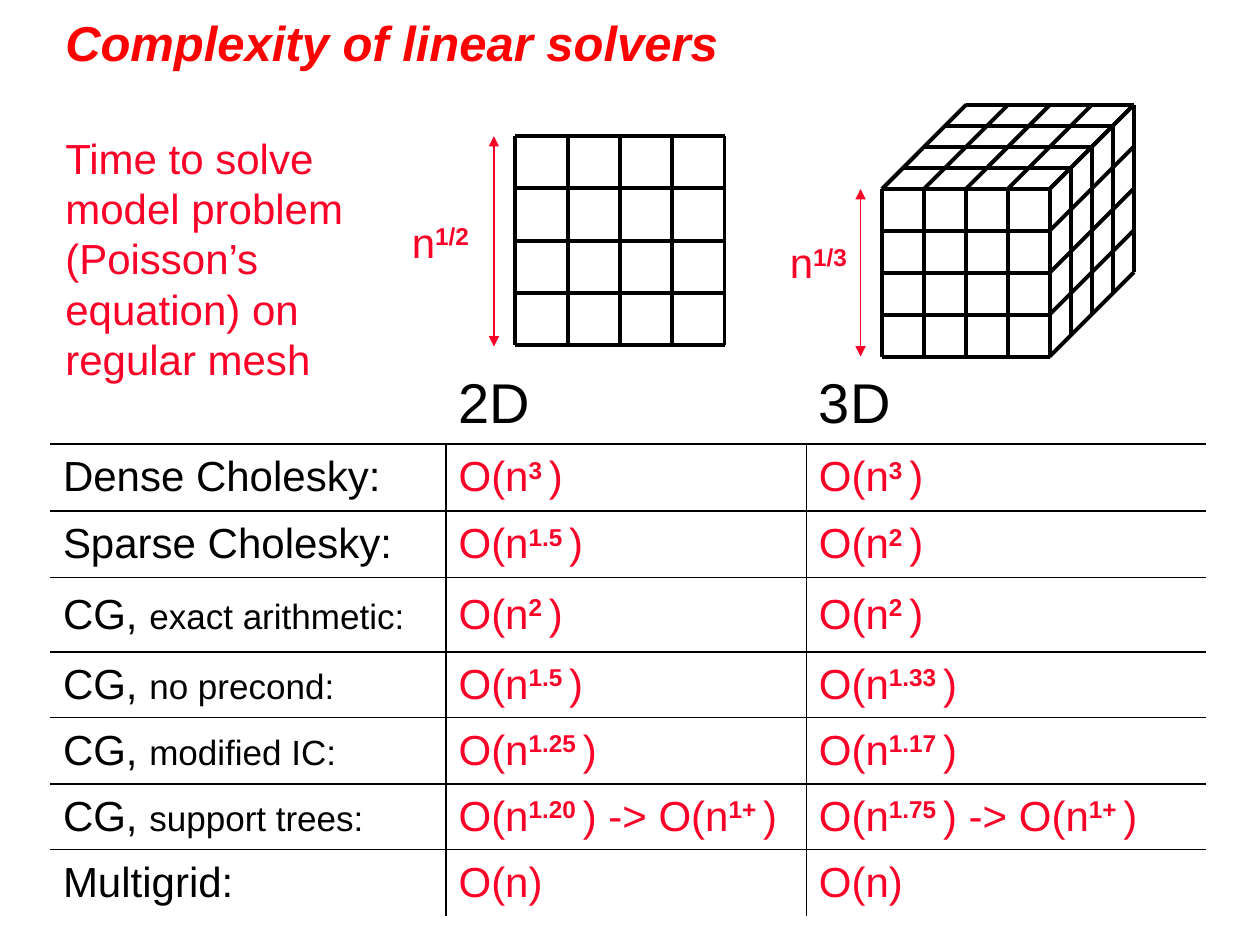
from lxml import etree
from pptx import Presentation
from pptx.dml.color import RGBColor
from pptx.enum.shapes import MSO_CONNECTOR
from pptx.enum.text import MSO_ANCHOR, MSO_AUTO_SIZE
from pptx.oxml.ns import qn
from pptx.util import Inches, Pt

STRAIGHT = MSO_CONNECTOR.STRAIGHT
MIDDLE = MSO_ANCHOR.MIDDLE
GROW = MSO_AUTO_SIZE.SHAPE_TO_FIT_TEXT
COLORS = {"title": "FF0000", "red": "FC0128", "black": "000000"}


def write(frame, text, color, size=24, small=None):
    """Add runs split at "|"; every second one is raised, or small if given."""
    for i, part in enumerate(text.split("|")):
        odd = i % 2 == 1
        run = frame.paragraphs[0].add_run()
        run.text = part
        run.font.name = "Arial"
        run.font.size = Pt(small if odd and small else size)
        run.font.color.rgb = RGBColor.from_string(COLORS[color])
        run.font.bold = odd and not small
        if odd and not small:
            run.font._element.set("baseline", "30000")


def draw(group, x1, y1, x2, y2, color="black", width=2.25, arrows=False):
    line = group.shapes.add_connector(
        STRAIGHT, Inches(x1), Inches(y1), Inches(x2), Inches(y2))
    line.line.color.rgb = RGBColor.from_string(COLORS[color])
    line.line.width = Pt(width)
    if arrows:
        for end in ("a:headEnd", "a:tailEnd"):
            etree.SubElement(line.line._get_or_add_ln(), qn(end), type="triangle")
    etree.SubElement(line._element.spPr, qn("a:effectLst"))


deck = Presentation()
deck.slide_width, deck.slide_height = Inches(10), Inches(7.5)
slide = deck.slides.add_slide(deck.slide_layouts[6])

# Title
title = slide.shapes.add_textbox(Inches(0.42), Inches(0), Inches(9.33), Inches(0.67))
frame = title.text_frame
frame.word_wrap = True
frame.vertical_anchor = MIDDLE
write(frame, "Complexity of linear solvers", "title", 28)
font = frame.paragraphs[0].runs[0].font
font.bold = font.italic = True

# Table of running times
rows = [
    ("", "2D", "3D"),
    ("Dense Cholesky:", "O(n|3 |)", "O(n|3 |)"),
    ("Sparse Cholesky:", "O(n|1.5 |)", "O(n|2 |)"),
    ("CG, |exact arithmetic:", "O(n|2 |)", "O(n|2 |)"),
    ("CG, |no precond:", "O(n|1.5 |)", "O(n|1.33 |)"),
    ("CG, |modified IC:", "O(n|1.25 |)", "O(n|1.17 |)"),
    ("CG, |support trees:", "O(n|1.20 |) -> O(n|1+ |)", "O(n|1.75 |) -> O(n|1+ |)"),
    ("Multigrid:", "O(n)", "O(n)"),
]
widths = [3.14, 2.86, 3.17]
heights = [0.63, 0.53, 0.53, 0.59, 0.52, 0.53, 0.52, 0.53]
table = slide.shapes.add_table(len(rows), len(widths), Inches(0.4), Inches(2.89),
                               Inches(9.17), Inches(4.38)).table
table.first_row = table.horz_banding = False
for col, width in zip(table.columns, widths):
    col.width = Inches(width)
for row, height in zip(table.rows, heights):
    row.height = Inches(height)

for r, texts in enumerate(rows):
    for c, text in enumerate(texts):
        cell = table.cell(r, c)
        cell.vertical_anchor = MIDDLE
        if text:
            write(cell.text_frame, text, "red" if r and c else "black",
                  24 if r else 32, 20 if c == 0 else None)
        # Rules lie between cells only, with no uprights in the heading row
        sides = {"L": r > 0 and c > 0, "R": r > 0 and c < 2,
                 "T": r > 0, "B": r < len(rows) - 1}
        props = cell._tc.get_or_add_tcPr()
        for side, shown in sides.items():
            edge = etree.SubElement(props, qn("a:ln" + side), w=str(Pt(1)))
            if shown:
                fill = etree.SubElement(edge, qn("a:solidFill"))
                etree.SubElement(fill, qn("a:srgbClr"), val=COLORS["black"])
            else:
                etree.SubElement(edge, qn("a:noFill"))
        cell.fill.background()

# Square mesh
square = slide.shapes.add_group_shape()
left, top, side = 4.09, 1.08, 1.66
for i in range(5):
    gap = i * side / 4
    draw(square, left, top + gap, left + side, top + gap)
    draw(square, left + gap, top + side, left + gap, top)

# Cube mesh: front, top and right faces
cube = slide.shapes.add_group_shape()
left, top, side, depth = 7, 1.5, 1.33, 0.67
right = left + side
for i in range(5):
    gap, back = i * side / 4, i * depth / 4
    draw(cube, left, top + gap, right, top + gap)
    draw(cube, left + gap, top + side, left + gap, top)
    draw(cube, left + back, top - back, right + back, top - back)
    draw(cube, left + gap, top, left + gap + depth, top - depth)
    draw(cube, right + back, top - back, right + back, top - back + side)
    draw(cube, right + depth, top + gap - depth, right, top + gap)

# Side lengths with their arrows
for group, text, x, y, arrow, start, end in [
    (square, "n|1/2", 3.17, 1.67, 3.92, 2.75, 1.08),
    (cube, "n|1/3", 6.17, 1.83, 6.83, 2.83, 1.5),
]:
    label = group.shapes.add_textbox(Inches(x), Inches(y), Inches(0.7), Inches(0.5))
    label.text_frame.word_wrap = False
    label.text_frame.auto_size = GROW
    write(label.text_frame, text, "red")
    draw(group, arrow, start, arrow, end, "red", 1, True)

# Problem statement
note = slide.shapes.add_textbox(Inches(0.42), Inches(1), Inches(2.42), Inches(2.1))
note.text_frame.word_wrap = True
note.text_frame.auto_size = GROW
write(note.text_frame,
      "Time to solve model problem (Poisson’s equation) on regular mesh", "red")

deck.save("out.pptx")
